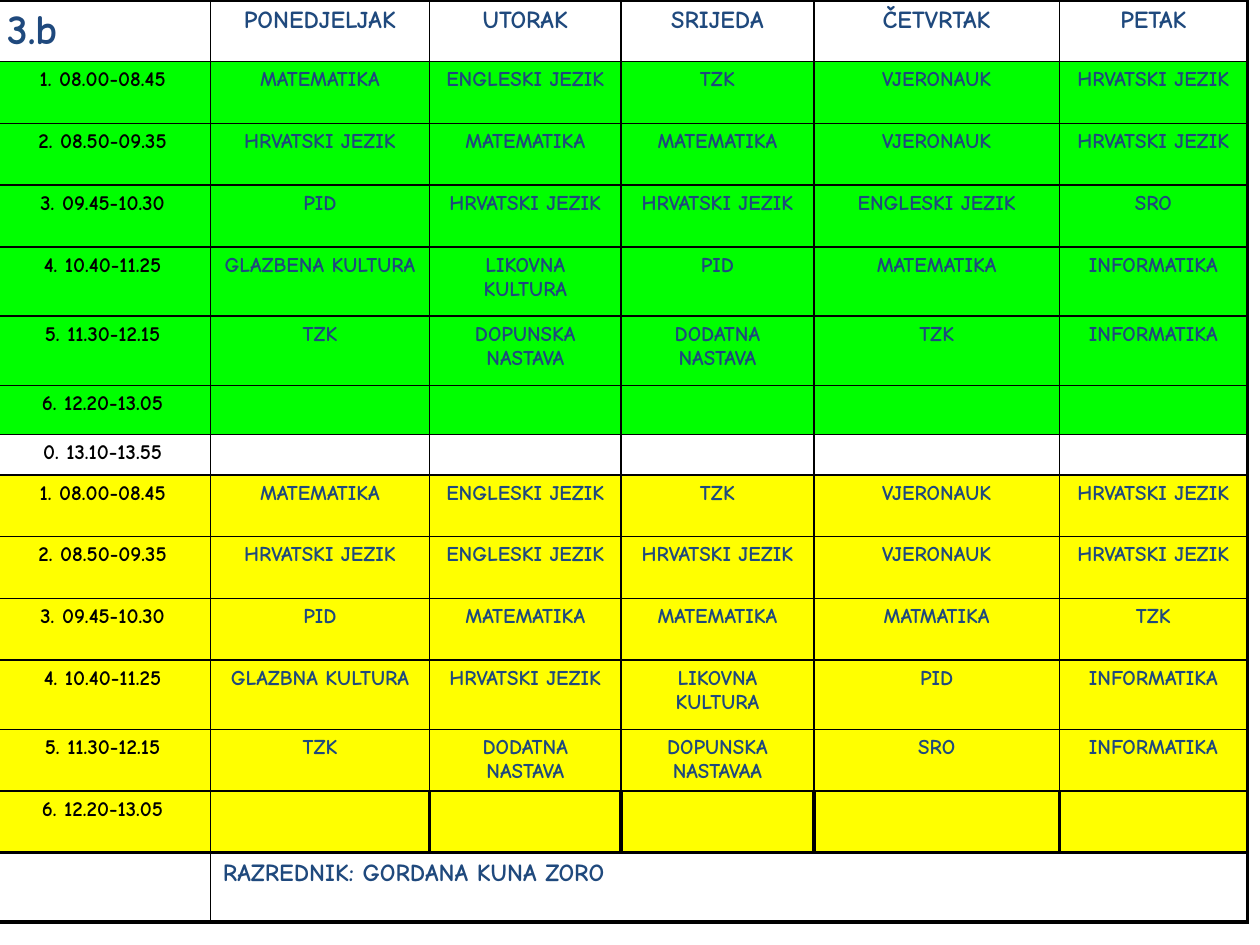
import dataclasses

import lxml.etree
import pptx
import pptx.dml.color
import pptx.enum.text
import pptx.oxml.ns
import pptx.util

Inches = pptx.util.Inches
Pt = pptx.util.Pt
RGB = pptx.dml.color.RGBColor.from_string
CENTER = pptx.enum.text.PP_ALIGN.CENTER
LEFT = pptx.enum.text.PP_ALIGN.LEFT


@dataclasses.dataclass(frozen=True)
class Theme:
    font: str = "Comic Neue"
    navy: str = "1F497D"
    black: str = "000000"
    green: str = "00FF00"
    yellow: str = "FFFF00"
    title_size: int = 24
    heading_size: int = 14
    body_size: int = 12
    thin: float = 1
    thick: float = 2.25


THEME = Theme()

# Timetable content
DAYS = ["3.b", "PONEDJELJAK", "UTORAK", "SRIJEDA", "ČETVRTAK", "PETAK"]
TIMES = ["1. 08.00-08.45", "2. 08.50-09.35", "3. 09.45-10.30",
         "4. 10.40-11.25", "5. 11.30-12.15", "6. 12.20-13.05"]
BREAK = "0. 13.10-13.55"
TEACHER = "RAZREDNIK: GORDANA KUNA ZORO"
EMPTY = [""] * 5
GREEN_WEEK = [
    ["MATEMATIKA", "ENGLESKI JEZIK", "TZK", "VJERONAUK", "HRVATSKI JEZIK"],
    ["HRVATSKI JEZIK", "MATEMATIKA", "MATEMATIKA", "VJERONAUK", "HRVATSKI JEZIK"],
    ["PID", "HRVATSKI JEZIK", "HRVATSKI JEZIK", "ENGLESKI JEZIK", "SRO"],
    ["GLAZBENA KULTURA", "LIKOVNA KULTURA", "PID", "MATEMATIKA", "INFORMATIKA"],
    ["TZK", "DOPUNSKA NASTAVA", "DODATNA NASTAVA", "TZK", "INFORMATIKA"],
    EMPTY,
]
YELLOW_WEEK = [
    ["MATEMATIKA", "ENGLESKI JEZIK", "TZK", "VJERONAUK", "HRVATSKI JEZIK"],
    ["HRVATSKI JEZIK", "ENGLESKI JEZIK", "HRVATSKI JEZIK", "VJERONAUK", "HRVATSKI JEZIK"],
    ["PID", "MATEMATIKA", "MATEMATIKA", "MATMATIKA", "TZK"],
    ["GLAZBNA KULTURA", "HRVATSKI JEZIK", "LIKOVNA KULTURA", "PID", "INFORMATIKA"],
    ["TZK", "DODATNA NASTAVA", "DOPUNSKA NASTAVAA", "SRO", "INFORMATIKA"],
    EMPTY,
]
COLUMN_WIDTHS = [1.71, 1.74, 1.52, 1.53, 1.95, 1.49]
ROW_HEIGHTS = [0.49, 0.49, 0.49, 0.49, 0.55, 0.55, 0.39, 0.32,
               0.49, 0.49, 0.49, 0.55, 0.49, 0.49, 0.55]


def write_text(text_frame, text, size=THEME.body_size, color=THEME.navy, align=CENTER):
    paragraph = text_frame.paragraphs[0]
    paragraph.alignment = align
    if not text:
        # The end mark keeps an empty cell from growing its row
        lxml.etree.SubElement(paragraph._p, pptx.oxml.ns.qn("a:endParaRPr"),
                              sz=str(size * 100))
        return
    run = paragraph.add_run()
    run.text = text
    run.font.name = THEME.font
    run.font.size = Pt(size)
    run.font.bold = True
    run.font.color.rgb = RGB(color)


class TimetableSlide:
    def __init__(self, presentation, theme):
        self.theme = theme
        self.slide = presentation.slides.add_slide(presentation.slide_layouts[6])

    def add_table(self, left, top, widths, heights):
        table = self.slide.shapes.add_table(
            len(heights), len(widths), Inches(left), Inches(top),
            Inches(sum(widths)), Inches(sum(heights))).table
        table.first_row = table.horz_banding = False
        for column, width in zip(table.columns, widths):
            column.width = Inches(width)
        for row, height in zip(table.rows, heights):
            row.height = Inches(height)
        return table

    def set_borders(self, cell, **weights):
        properties = cell._tc.get_or_add_tcPr()
        for side in "LRTB":
            line = lxml.etree.SubElement(properties, pptx.oxml.ns.qn(f"a:ln{side}"),
                                         w=str(Pt(weights[side])))
            fill = lxml.etree.SubElement(line, pptx.oxml.ns.qn("a:solidFill"))
            lxml.etree.SubElement(fill, pptx.oxml.ns.qn("a:srgbClr"),
                                  val=self.theme.black)

    def set_fill(self, cell, color):
        if color:
            cell.fill.solid()
            cell.fill.fore_color.rgb = RGB(color)
        else:
            cell.fill.background()

    def text_format(self, row, column, last_row):
        if row == 0 and column == 0:
            return {"size": self.theme.title_size, "align": LEFT}
        if row == 0:
            return {"size": self.theme.heading_size}
        if row == last_row and column == 1:
            return {"size": self.theme.heading_size, "align": LEFT}
        return {"color": self.theme.black} if column == 0 else {}

    def add_timetable(self, rows, fills):
        table = self.add_table(-0.04, 0, COLUMN_WIDTHS, ROW_HEIGHTS)
        last_row, column_count = len(rows) - 1, len(COLUMN_WIDTHS)

        def horizontal(edge):
            heavy = edge in (0, last_row, last_row + 1)
            return self.theme.thick if heavy else self.theme.thin

        def vertical(row, edge):
            heavy = edge in (0, column_count) or (row == last_row - 1 and edge > 1)
            return self.theme.thick if heavy else self.theme.thin

        table.cell(last_row, 1).merge(table.cell(last_row, column_count - 1))
        for r, (texts, fill) in enumerate(zip(rows, fills)):
            for c, text in enumerate(texts):
                cell = table.cell(r, c)
                right = column_count if cell.is_merge_origin else c + 1
                self.set_borders(cell, L=vertical(r, c), R=vertical(r, right),
                                 T=horizontal(r), B=horizontal(r + 1))
                self.set_fill(cell, fill)
                write_text(cell.text_frame, text,
                           **self.text_format(r, c, last_row))


def main():
    presentation = pptx.Presentation()
    presentation.slide_width = Inches(10)
    presentation.slide_height = Inches(7.5)

    # Header, green week, break, yellow week, teacher
    rows = [DAYS]
    rows += [[time, *lessons] for time, lessons in zip(TIMES, GREEN_WEEK)]
    rows += [[BREAK, *EMPTY]]
    rows += [[time, *lessons] for time, lessons in zip(TIMES, YELLOW_WEEK)]
    rows += [["", TEACHER, "", "", "", ""]]
    fills = [None, *[THEME.green] * 6, None, *[THEME.yellow] * 6, None]

    TimetableSlide(presentation, THEME).add_timetable(rows, fills)
    presentation.save("out.pptx")


if __name__ == "__main__":
    main()
